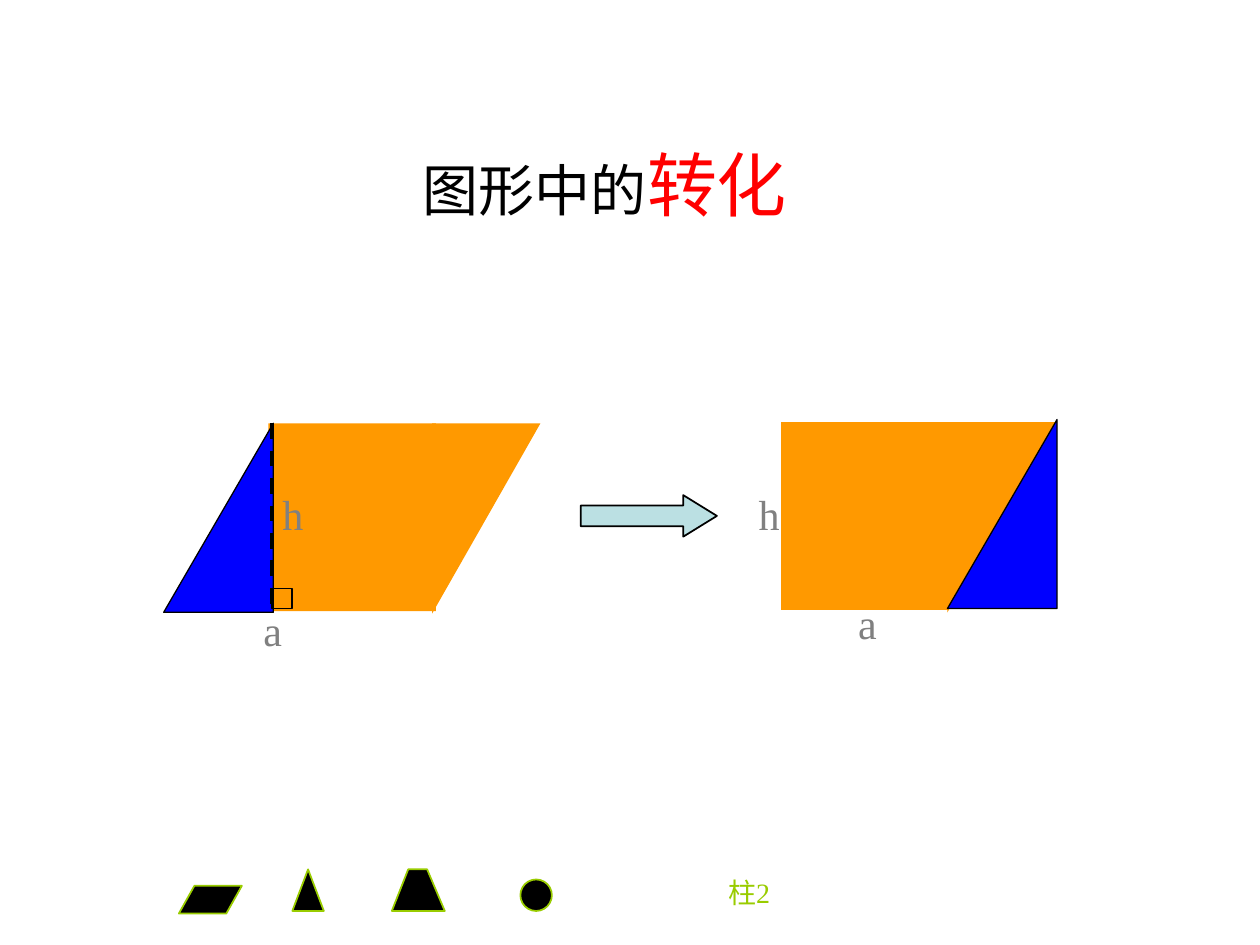
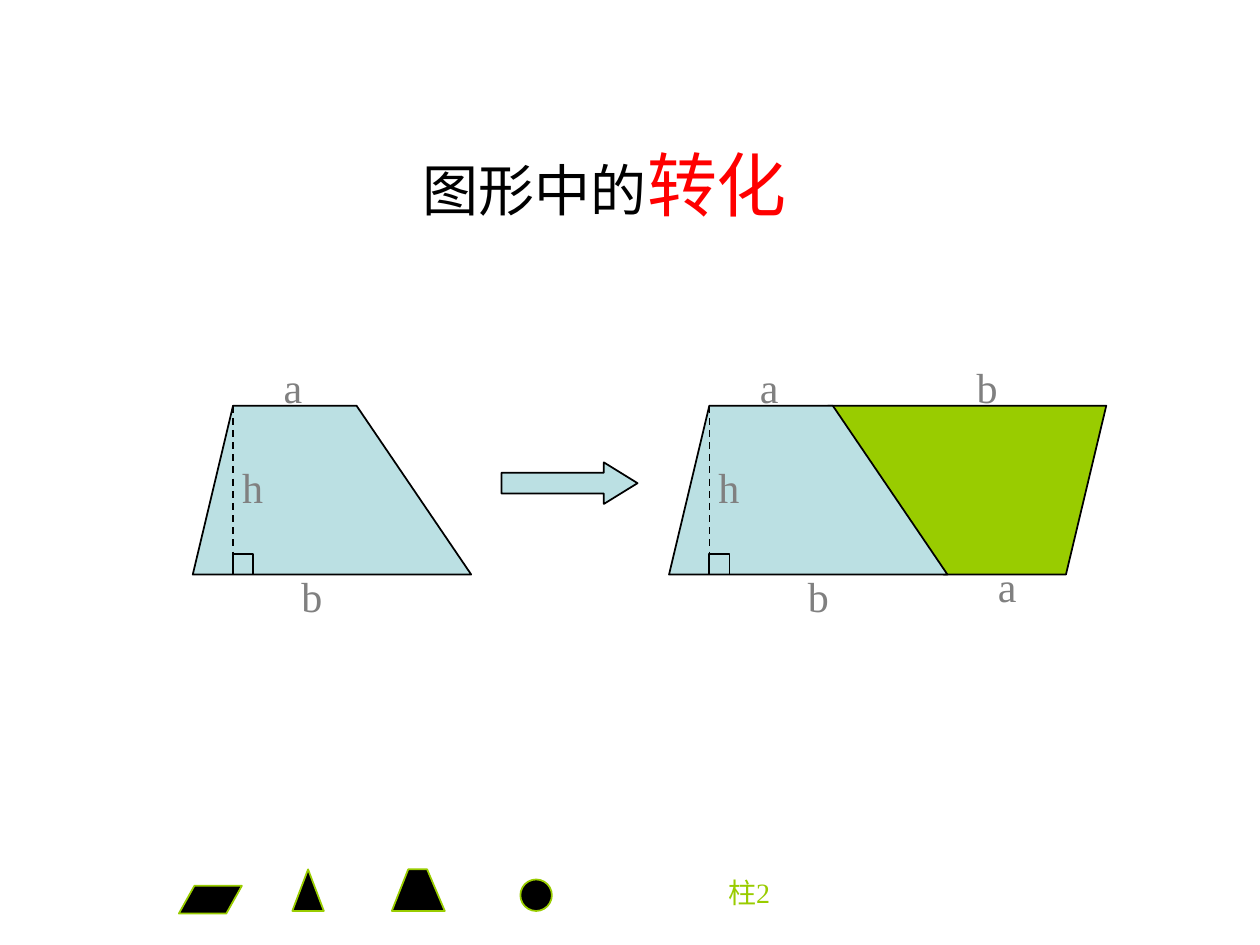
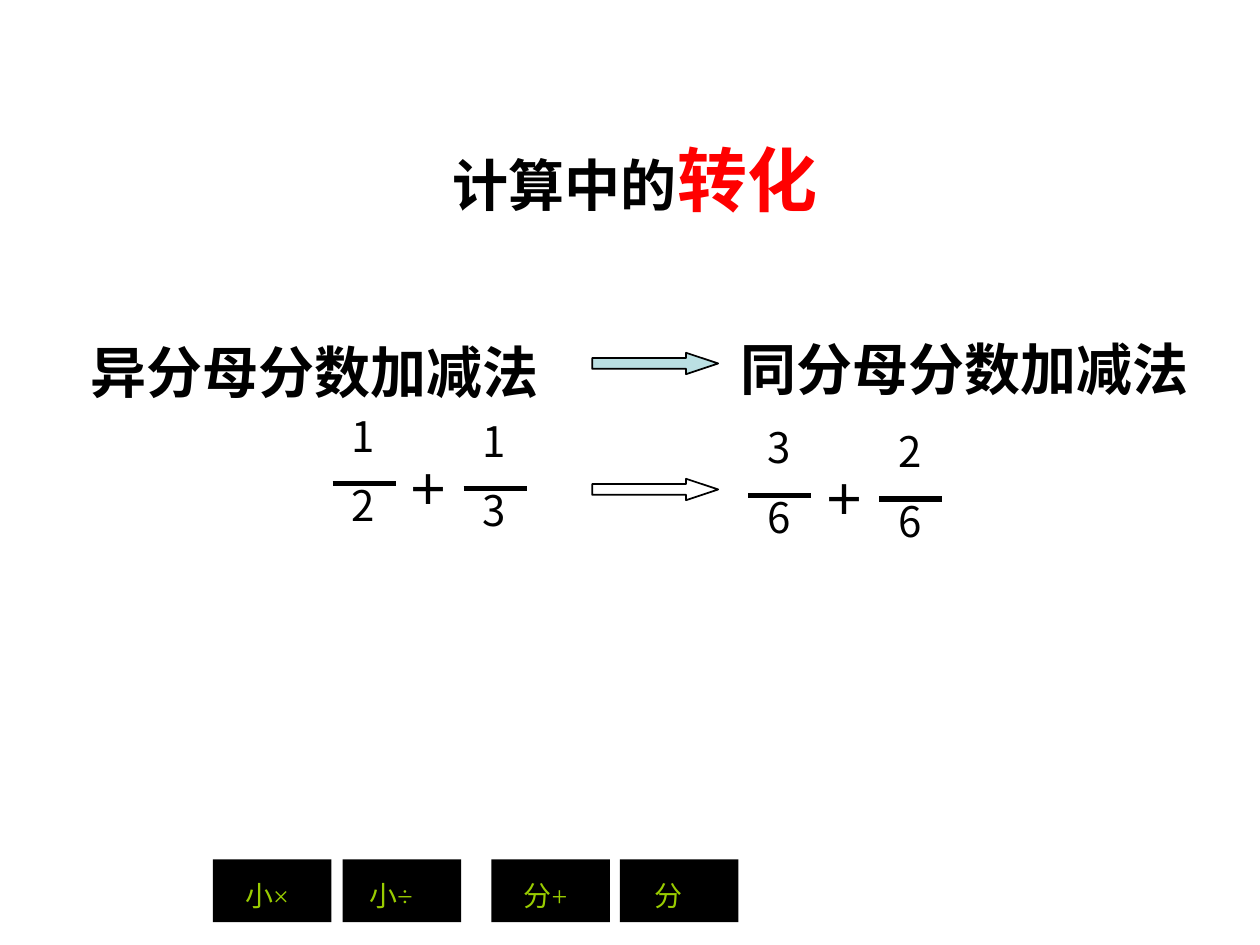
from lxml.etree import SubElement
from pptx import Presentation
from pptx.dml.color import RGBColor
from pptx.enum.dml import MSO_LINE
from pptx.enum.shapes import MSO_CONNECTOR, MSO_SHAPE as SHAPE
from pptx.enum.text import MSO_ANCHOR, MSO_AUTO_SIZE, PP_ALIGN
from pptx.oxml.ns import qn
from pptx.util import Inches, Pt

BLACK, WHITE, RED, GREY = "000000", "FFFFFF", "FF0000", "808080"
ORANGE, BLUE, PALE, GREEN = "FF9900", "0000FF", "BBE0E3", "99CC00"
SERIF, SANS, CJK = "Times New Roman", "Arial", "Noto Sans CJK SC"


def paint(shape, fill=None, line=None, width=1):
    shape.shadow.inherit = False
    if fill:
        shape.fill.solid()
        shape.fill.fore_color.rgb = RGBColor.from_string(fill)
    else:
        shape.fill.background()
    if line:
        shape.line.color.rgb = RGBColor.from_string(line)
        shape.line.width = Pt(width)
    else:
        shape.line.fill.background()


def write(shape, text, size, color, name, bold=False, align=PP_ALIGN.CENTER):
    shape.text_frame.word_wrap = True
    paragraph = shape.text_frame.paragraphs[0]
    paragraph.text = text
    paragraph.alignment = align
    paragraph.font.size = Pt(size)
    paragraph.font.bold = bold
    paragraph.font.name = name
    paragraph.font.color.rgb = RGBColor.from_string(color)
    properties = paragraph._p.get_or_add_pPr()
    SubElement(properties.find(qn("a:defRPr")), qn("a:ea"), typeface=CJK)
    return paragraph


presentation = Presentation()
presentation.slide_width, presentation.slide_height = Inches(10), Inches(7.5)

titles = [
    ("图形中的", (1.69, 0.91, 6.22, 1.1), False),
    ("图形中的", (1.69, 0.91, 6.22, 1.1), False),
    ("计算中的", (1.93, 0.76, 6.22, 1.32), True),
]
slides = []
for topic, box, bold in titles:
    slide = presentation.slides.add_slide(presentation.slide_layouts[5])
    title = slide.shapes.title
    title.left, title.top, title.width, title.height = map(Inches, box)
    title.text_frame.vertical_anchor = MSO_ANCHOR.MIDDLE
    paragraph = write(title, topic, 32, BLACK, SANS, bold)
    run = paragraph.add_run()
    run.text = "转化"
    run.font.size = Pt(40)
    run.font.color.rgb = RGBColor.from_string(RED)
    slides.append(slide)
parallelogram_slide, trapezoid_slide, fraction_slide = slides

arrows = [
    (parallelogram_slide, (4.61, 3.93, 1.08, 0.33), 0.81, PALE),
    (trapezoid_slide, (3.98, 3.67, 1.08, 0.33), 0.81, PALE),
    (fraction_slide, (4.7, 2.8, 1, 0.17), 1.5, PALE),
    (fraction_slide, (4.7, 3.8, 1, 0.17), 1.5, WHITE),
]
for slide, box, head_length, fill in arrows:
    arrow = slide.shapes.add_shape(SHAPE.RIGHT_ARROW, *map(Inches, box))
    arrow.adjustments[1] = head_length
    paint(arrow, fill, BLACK)

trapezoid = [(1.85, 3.22), (2.83, 3.22), (3.74, 4.56), (1.53, 4.56)]
shifted_trapezoid = [(x + 3.78, y) for x, y in trapezoid]
turned_trapezoid = [(8.46, 4.56), (7.49, 4.56), (6.57, 3.22), (8.78, 3.22)]
icon_trapezoid = [(3.11, 7.23), (3.24, 6.9), (3.39, 6.9), (3.53, 7.23)]
polygons = [
    (trapezoid_slide, trapezoid, PALE, BLACK),
    (trapezoid_slide, turned_trapezoid, GREEN, BLACK),
    (trapezoid_slide, shifted_trapezoid, PALE, BLACK),
    (parallelogram_slide, icon_trapezoid, BLACK, GREEN),
    (trapezoid_slide, icon_trapezoid, BLACK, GREEN),
]
for slide, points, fill, line in polygons:
    corners = [(Inches(x), Inches(y)) for x, y in points]
    builder = slide.shapes.build_freeform(*corners[0], scale=1.0)
    builder.add_line_segments(corners[1:], close=True)
    paint(builder.convert_to_shape(), fill, line)

figures = [
    (parallelogram_slide, SHAPE.RECTANGLE, (2.13, 3.36, 1.33, 1.49), None, ORANGE, None),
    (parallelogram_slide, SHAPE.RIGHT_TRIANGLE, (1.3, 3.36, 0.87, 1.5), "flipH", BLUE, BLACK),
    (parallelogram_slide, SHAPE.RECTANGLE, (2.16, 4.67, 0.16, 0.16), None, None, BLACK),
    (parallelogram_slide, SHAPE.RIGHT_TRIANGLE, (3.43, 3.36, 0.86, 1.51), "flipV", ORANGE, None),
    (parallelogram_slide, SHAPE.RIGHT_TRIANGLE, (7.52, 3.35, 0.86, 1.51), "flipV", ORANGE, None),
    (parallelogram_slide, SHAPE.RECTANGLE, (6.2, 3.35, 1.33, 1.49), None, ORANGE, None),
    (parallelogram_slide, SHAPE.RIGHT_TRIANGLE, (7.52, 3.33, 0.87, 1.5), "flipH", BLUE, BLACK),
    (trapezoid_slide, SHAPE.RECTANGLE, (1.85, 4.4, 0.16, 0.16), None, None, BLACK),
    (trapezoid_slide, SHAPE.RECTANGLE, (5.63, 4.4, 0.16, 0.16), None, None, BLACK),
]
for slide in (parallelogram_slide, trapezoid_slide):
    figures += [
        (slide, SHAPE.PARALLELOGRAM, (1.42, 7.03, 0.5, 0.22), None, BLACK, GREEN),
        (slide, SHAPE.ISOSCELES_TRIANGLE, (2.32, 6.9, 0.25, 0.33), None, BLACK, GREEN),
        (slide, SHAPE.OVAL, (4.13, 6.98, 0.25, 0.25), None, BLACK, GREEN),
    ]
for slide, kind, box, flip, fill, line in figures:
    shape = slide.shapes.add_shape(kind, *map(Inches, box))
    if flip:
        shape._element.spPr.find(qn("a:xfrm")).set(flip, "1")
    if kind == SHAPE.PARALLELOGRAM:
        shape.adjustments[0] = 0.56
    paint(shape, fill, line, 0.75 if kind == SHAPE.RIGHT_TRIANGLE else 1)

lines = [
    (parallelogram_slide, (2.16, 3.36, 2.16, 4.82), 2.25, MSO_LINE.DASH),
    (trapezoid_slide, (1.85, 3.22, 1.85, 4.56), 1, MSO_LINE.DASH),
    (trapezoid_slide, (5.63, 3.22, 5.63, 4.56), 1, MSO_LINE.DASH),
]
labels = [
    (slide, text, (left, top, 0.63, 0.5), 24, GREY, SERIF, False, PP_ALIGN.CENTER)
    for slide, text, left, top in [
        (parallelogram_slide, "a", 1.85, 4.75),
        (parallelogram_slide, "h", 2.01, 3.83),
        (parallelogram_slide, "a", 6.57, 4.69),
        (parallelogram_slide, "h", 5.79, 3.83),
        (trapezoid_slide, "a", 2.01, 2.82),
        (trapezoid_slide, "h", 1.69, 3.61),
        (trapezoid_slide, "b", 2.16, 4.48),
        (trapezoid_slide, "a", 7.68, 4.4),
        (trapezoid_slide, "h", 5.47, 3.61),
        (trapezoid_slide, "a", 5.79, 2.82),
        (trapezoid_slide, "b", 7.52, 2.82),
        (trapezoid_slide, "b", 6.18, 4.48),
    ]
]
for slide in (parallelogram_slide, trapezoid_slide):
    labels.append((slide, "柱2", (5.63, 6.9, 0.63, 0.37), 16, GREEN, SERIF, False, PP_ALIGN.CENTER))
for text, left, top in [("异分母分数加减法", 0.46, 2.63), ("同分母分数加减法", 5.62, 2.61)]:
    labels.append((fraction_slide, text, (left, top, 4.07, 0.64), 32, BLACK, CJK, True, PP_ALIGN.CENTER))
for left, top in [(3.11, 3.63), (6.41, 3.71)]:
    labels.append((fraction_slide, "＋", (left, top, 0.58, 0.5), 24, BLACK, CJK, True, PP_ALIGN.CENTER))

fractions = [("1", "2", 2.64, 3.84), ("1", "3", 3.68, 3.88), ("3", "6", 5.94, 3.93), ("2", "6", 6.98, 3.96)]
for numerator, denominator, left, middle in fractions:
    lines.append((fraction_slide, (left, middle, left + 0.5, middle), 3, None))
    for digit, offset in [(numerator, -0.63), (denominator, -0.08)]:
        box = (left + 0.05, middle + offset, 0.63, 0.5)
        labels.append((fraction_slide, digit, box, 24, BLACK, CJK, False, PP_ALIGN.LEFT))

for slide, ends, width, dash in lines:
    connector = slide.shapes.add_connector(MSO_CONNECTOR.STRAIGHT, *map(Inches, ends))
    connector.line.color.rgb = RGBColor.from_string(BLACK)
    connector.line.width = Pt(width)
    connector.line.dash_style = dash
    SubElement(connector._element.spPr, qn("a:effectLst"))

for slide, text, box, size, color, name, bold, align in labels:
    label = slide.shapes.add_textbox(*map(Inches, box))
    label.text_frame.auto_size = MSO_AUTO_SIZE.SHAPE_TO_FIT_TEXT
    paragraph = write(label, text, size, color, name, bold, align)
    spacing = paragraph._p.get_or_add_pPr().get_or_add_spcBef()
    SubElement(spacing, qn("a:spcPct"), val="50000")

buttons = [("小×", 1.69, 0.18), ("小÷", 2.72, 0.27), ("分+", 3.9, 0.18), ("分", 4.92, 0.27)]
for text, left, right_inset in buttons:
    button = fraction_slide.shapes.add_shape(SHAPE.RECTANGLE, Inches(left), Inches(6.82), Inches(0.94), Inches(0.5))
    paint(button, BLACK)
    button.text_frame.margin_right = Inches(right_inset)
    button.text_frame.margin_top = Inches(0.12)
    write(button, text, 16, GREEN, SERIF)

presentation.save("out.pptx")
